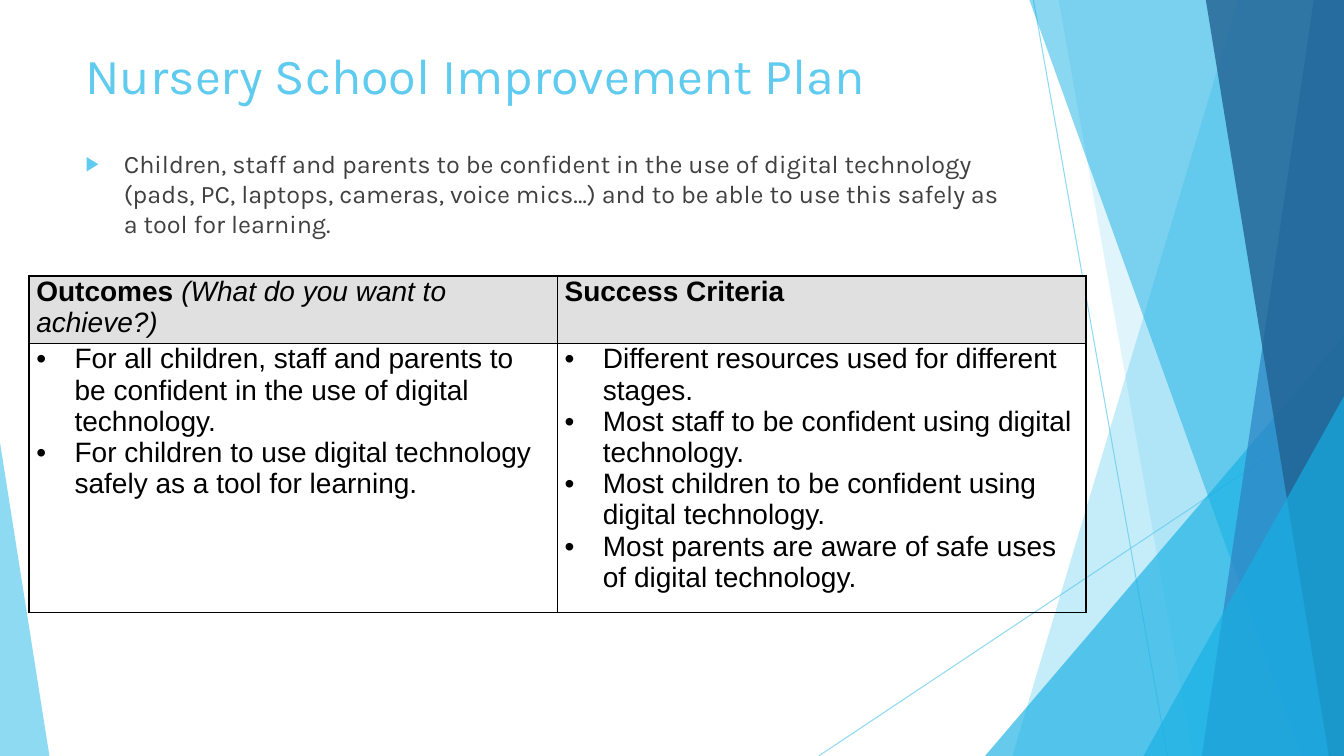
"""Build the nursery school improvement plan slide."""
from dataclasses import dataclass

from lxml.etree import SubElement
from pptx import Presentation
from pptx.dml.color import RGBColor
from pptx.enum.shapes import MSO_CONNECTOR as Connector, MSO_SHAPE as Shape
from pptx.enum.text import MSO_ANCHOR as Anchor
from pptx.oxml.ns import qn
from pptx.util import Inches, Pt


@dataclass(frozen=True)
class Theme:
    sky: str = "5FCBEF"
    azure: str = "17B0E4"
    blue: str = "2E83C3"
    navy: str = "226292"
    black: str = "000000"
    body: str = "404040"
    header: str = "E0E0E0"
    heading_font: str = "Karla"
    table_font: str = "Arial"
    title_size: int = 36
    body_size: int = 18
    table_size: int = 20


theme = Theme()
WIDTH, HEIGHT = 13.33, 7.5


def add_run(paragraph, text, font, size, color, bold=False, italic=False):
    run = paragraph.add_run()
    run.text = text
    run.font.name, run.font.size = font, Pt(size)
    run.font.bold, run.font.italic = bold, italic
    run.font.color.rgb = RGBColor.from_string(color)


def add_bullet(paragraph, symbol, color, percent):
    props = paragraph._p.get_or_add_pPr()
    props.set("marL", str(Inches(0.38)))
    props.set("indent", str(Inches(-0.38)))
    bullet_color = SubElement(props, qn("a:buClr"))
    SubElement(bullet_color, qn("a:srgbClr"), val=color)
    SubElement(props, qn("a:buSzPct"), val=str(percent * 1000))
    SubElement(props, qn("a:buFont"), typeface=theme.table_font)
    SubElement(props, qn("a:buChar"), char=symbol)


prs = Presentation()
prs.slide_width, prs.slide_height = Inches(WIDTH), Inches(HEIGHT)
slide = prs.slides.add_slide(prs.slide_layouts[6])
shapes = slide.shapes

for x1, y1, x2, y2 in [(10.25, 0, 11.58, HEIGHT), (WIDTH, 4.03, 8.12, HEIGHT)]:
    ray = shapes.add_connector(
        Connector.STRAIGHT, Inches(x1), Inches(y1), Inches(x2), Inches(y2))
    ray.line.width = Pt(0.75)
    ray.line.color.rgb = RGBColor.from_string(theme.sky)
    ray_props = ray._element.spPr
    SubElement(ray_props.find(".//" + qn("a:srgbClr")), qn("a:alpha"), val="70000")
    SubElement(ray_props, qn("a:effectLst"))

facets = [
    ("band", (12.28, 10.04), theme.sky, 36),
    ("band", (10.5, 11.83), theme.sky, 20),
    ("triangle", (9.77, 3.33, WIDTH, 1), theme.azure, 66),
    ("band", (10.21, 12.91), theme.azure, 50),
    ("band", (13.03, 11.92), theme.blue, 70),
    ("band", (11.96, 13.18), theme.navy, 80),
    ("triangle", (11.34, 3.93, WIDTH, 1), theme.azure, 66),
    ("triangle", (0, 4.39, 0.49, 0), theme.sky, 70),
]
for kind, geometry, color, opacity in facets:
    if kind == "band":
        top_x, bottom_x = geometry
        outline = shapes.build_freeform(Inches(top_x), 0)
        outline.add_line_segments([
            (Inches(WIDTH), 0),
            (Inches(WIDTH), Inches(HEIGHT)),
            (Inches(bottom_x), Inches(HEIGHT)),
        ])
        facet = outline.convert_to_shape()
    else:
        left, top, right, apex = geometry
        facet = shapes.add_shape(
            Shape.ISOSCELES_TRIANGLE, Inches(left), Inches(top),
            Inches(right - left), Inches(HEIGHT - top))
        facet.adjustments[0] = apex
    facet.shadow.inherit = False
    facet.line.fill.background()
    facet.fill.solid()
    facet.fill.fore_color.rgb = RGBColor.from_string(color)
    fill_color = facet._element.spPr.find(".//" + qn("a:srgbClr"))
    SubElement(fill_color, qn("a:alpha"), val=str(opacity * 1000))

title = shapes.add_textbox(Inches(0.75), Inches(0.39), Inches(10.64), Inches(1.65)).text_frame
title.word_wrap = True
add_run(title.paragraphs[0], "Nursery School Improvement Plan",
        theme.heading_font, theme.title_size, theme.sky)

aim = shapes.add_textbox(Inches(0.75), Inches(1.42), Inches(9.33), Inches(4.8)).text_frame
aim.word_wrap = True
aim.paragraphs[0].space_before = Pt(10)
add_bullet(aim.paragraphs[0], "▶", theme.sky, 80)
add_run(aim.paragraphs[0],
        "Children, staff and parents to be confident in the use of digital technology "
        "(pads, PC, laptops, cameras, voice mics…) and to be able to use this safely "
        "as a tool for learning.",
        theme.heading_font, theme.body_size, theme.body)

headers = [
    [("Outcomes ", True, False), ("(What do you want to achieve?)", False, True)],
    [("Success Criteria", True, False)],
]
points = [
    ["For all children, staff and parents to be confident in the use of digital technology.",
     "For children to use digital technology safely as a tool for learning."],
    ["Different resources used for different stages.",
     "Most staff to be confident using digital technology.",
     "Most children to be confident using digital technology.",
     "Most parents are aware of safe uses of digital technology."],
]
plan = shapes.add_table(2, 2, Inches(0.29), Inches(2.74), Inches(10.48), Inches(3.09)).table
plan.first_row = plan.horz_banding = False
for column in plan.columns:
    column.width = Inches(5.24)
for row, height in zip(plan.rows, (0.62, 2.47)):
    row.height = Inches(height)

for r in range(2):
    for c in range(2):
        cell = plan.cell(r, c)
        cell.margin_left = cell.margin_right = Inches(0.07)
        cell.margin_top = cell.margin_bottom = 0
        cell.vertical_anchor = Anchor.TOP
        outer_edges = {"lnL": c == 0, "lnR": c == 1, "lnT": r == 0, "lnB": r == 1}
        for edge, is_outer in outer_edges.items():
            border = SubElement(cell._tc.get_or_add_tcPr(), qn("a:" + edge),
                                w=str(Pt(1.5 if is_outer else 1)))
            border_fill = SubElement(border, qn("a:solidFill"))
            SubElement(border_fill, qn("a:srgbClr"), val=theme.black)
        frame = cell.text_frame
        if r == 0:
            cell.fill.solid()
            cell.fill.fore_color.rgb = RGBColor.from_string(theme.header)
            for text, bold, italic in headers[c]:
                add_run(frame.paragraphs[0], text, theme.table_font,
                        theme.table_size, theme.black, bold, italic)
        else:
            cell.fill.background()
            for i, text in enumerate(points[c]):
                paragraph = frame.add_paragraph() if i else frame.paragraphs[0]
                add_bullet(paragraph, "•", theme.black, 100)
                add_run(paragraph, text, theme.table_font, theme.table_size, theme.black)

prs.save("out.pptx")
